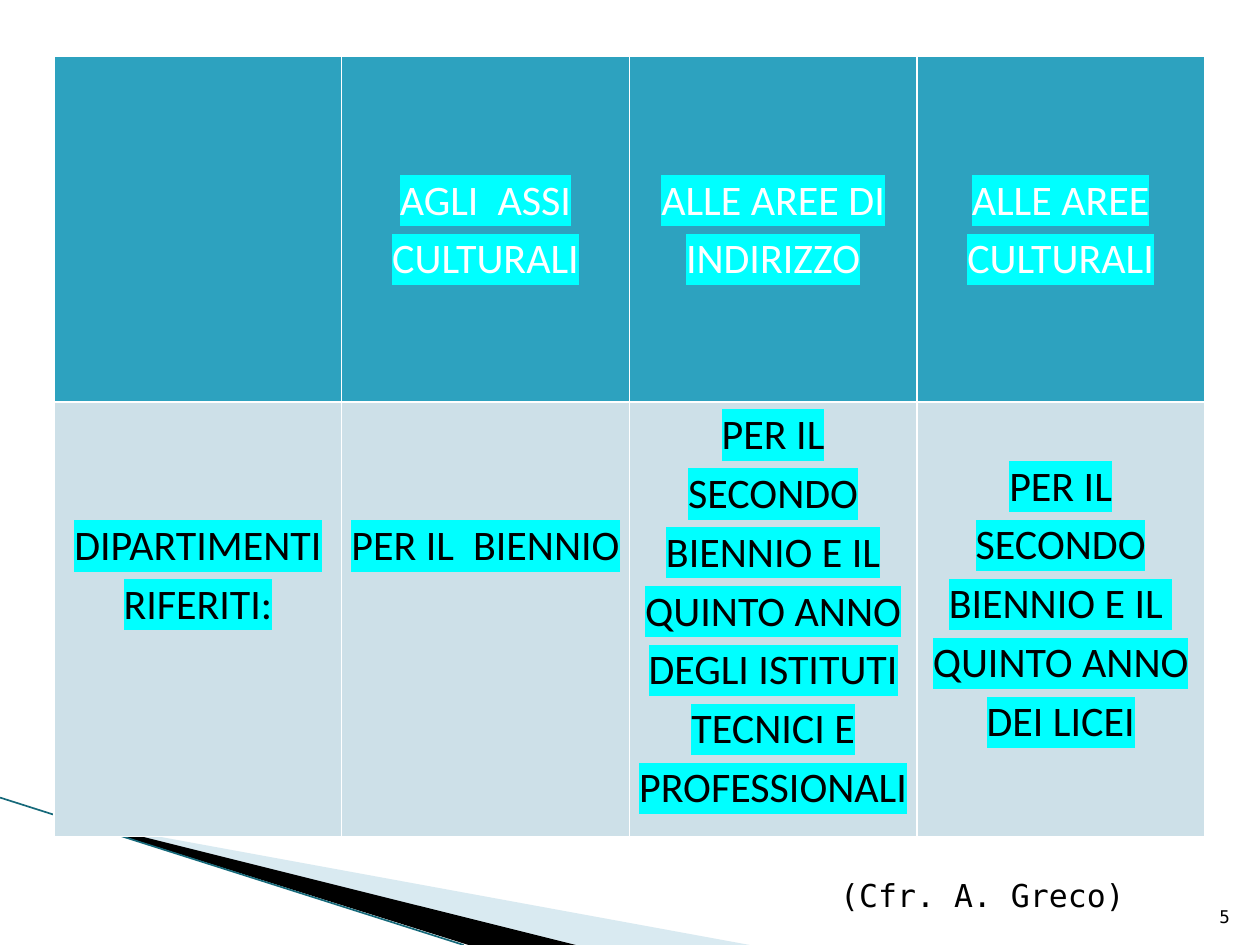
from dataclasses import dataclass

from lxml.etree import SubElement
from pptx import Presentation
from pptx.dml.color import RGBColor
from pptx.enum.shapes import MSO_CONNECTOR
from pptx.enum.text import MSO_ANCHOR, PP_ALIGN
from pptx.oxml import parse_xml
from pptx.oxml.ns import nsdecls, qn
from pptx.util import Inches, Pt


@dataclass(frozen=True)
class Theme:
    """Colours, fonts and type sizes of the slide."""
    header: str = "2DA2BF"
    body: str = "CDE0E8"
    white: str = "FFFFFF"
    black: str = "000000"
    highlight: str = "00FFFF"
    pale: str = "A0CBDC"
    edge: str = "16697A"
    table_font: str = "Calibri"
    note_font: str = "DejaVu Sans Mono"
    table_size: int = 24
    note_size: int = 18
    number_size: int = 10


@dataclass(frozen=True)
class Box:
    """A region in inches."""
    left: float
    top: float
    width: float
    height: float

    def lengths(self):
        """Return the region as slide lengths."""
        return [Inches(value) for value in (self.left, self.top, self.width, self.height)]


THEME = Theme()
HEADER_ROW = [
    (0, []),
    (0.88, ["AGLI  ASSI CULTURALI"]),
    (0.88, ["ALLE AREE DI INDIRIZZO"]),
    (0.88, ["ALLE AREE CULTURALI"]),
]
BODY_ROW = [
    (0.88, ["DIPARTIMENTI", "RIFERITI:"]),
    (0.88, ["PER IL  BIENNIO"]),
    (0, ["PER IL SECONDO BIENNIO E IL QUINTO ANNO DEGLI ISTITUTI TECNICI E PROFESSIONALI"]),
    (0.41, ["PER IL SECONDO BIENNIO E IL  QUINTO ANNO DEI LICEI"]),
]


def style_font(font, name, size, color):
    """Set the face, size and colour of a font."""
    font.name = name
    font.size = Pt(size)
    font.bold = False
    font.color.rgb = RGBColor.from_string(color)


def add_wedge(slide, box, points, color, opacity=None):
    """Draw a filled polygon from points relative to the box."""
    corners = [(Inches(box.left + x), Inches(box.top + y)) for x, y in points]
    builder = slide.shapes.build_freeform(*corners[0], scale=1.0)
    builder.add_line_segments(corners[1:], close=True)
    shape = builder.convert_to_shape()
    shape.shadow.inherit = False
    shape.fill.solid()
    shape.fill.fore_color.rgb = RGBColor.from_string(color)
    shape.line.fill.background()
    if opacity:
        color_element = shape.fill._xPr.find(qn("a:solidFill"))[0]
        SubElement(color_element, qn("a:alpha")).set("val", str(opacity * 1000))


def add_corner_decoration(slide, box):
    """Draw the two wedges and the thin edge in the lower left corner."""
    add_wedge(slide, box, [(0.55, 0.18), (5.95, 1.17), (4.56, 1.17), (0.55, 0.17)], THEME.pale, 40)
    add_wedge(slide, box, [(0.53, 0.16), (4.57, 1.17), (3.72, 1.17), (0.54, 0.17)], THEME.black)
    edge = slide.shapes.add_connector(
        MSO_CONNECTOR.STRAIGHT, Inches(box.left), Inches(box.top),
        Inches(box.left + 3.68), Inches(box.top + box.height))
    edge.line.color.rgb = RGBColor.from_string(THEME.edge)
    edge.line.width = Pt(0.95)
    SubElement(edge._element.spPr, qn("a:effectLst"))


def set_borders(cell):
    """Give a cell thin white borders."""
    properties = cell._tc.get_or_add_tcPr()
    for index, tag in enumerate(("lnL", "lnR", "lnT", "lnB")):
        properties.insert(index, parse_xml(
            f'<a:{tag} {nsdecls("a")} w="12700"><a:solidFill>'
            f'<a:srgbClr val="{THEME.white}"/></a:solidFill></a:{tag}>'))


def fill_cell(cell, offset, lines, fill, color):
    """Write highlighted centred lines below the given offset."""
    cell.fill.solid()
    cell.fill.fore_color.rgb = RGBColor.from_string(fill)
    set_borders(cell)
    cell.margin_left = cell.margin_right = Inches(0.07)
    cell.margin_top = Inches(offset)
    cell.margin_bottom = 0
    cell.vertical_anchor = MSO_ANCHOR.TOP
    cell.text_frame.text = "\n".join(lines)
    for paragraph in cell.text_frame.paragraphs:
        paragraph.alignment = PP_ALIGN.CENTER
        paragraph.line_spacing = 1.15
        for run in paragraph.runs:
            style_font(run.font, THEME.table_font, THEME.table_size, color)
            run._r.rPr.find(qn("a:solidFill")).addnext(parse_xml(
                f'<a:highlight {nsdecls("a")}><a:srgbClr val="{THEME.highlight}"/></a:highlight>'))


def add_departments_table(slide, box):
    """Build the table of departments in the box."""
    rows = [(HEADER_ROW, 2.74, THEME.header, THEME.white),
            (BODY_ROW, box.height - 2.74, THEME.body, THEME.black)]
    table = slide.shapes.add_table(len(rows), len(HEADER_ROW), *box.lengths()).table
    for column in table.columns:
        column.width = Inches(box.width / len(HEADER_ROW))
    for row, (contents, height, fill, color) in zip(table.rows, rows):
        row.height = Inches(height)
        for cell, (offset, lines) in zip(row.cells, contents):
            fill_cell(cell, offset, lines, fill, color)


def add_note(slide, box, text, size, alignment=PP_ALIGN.LEFT, anchor=MSO_ANCHOR.TOP):
    """Place one line of monospaced text in the box."""
    frame = slide.shapes.add_textbox(*box.lengths()).text_frame
    frame.word_wrap = True
    frame.vertical_anchor = anchor
    frame.text = text
    paragraph = frame.paragraphs[0]
    paragraph.alignment = alignment
    style_font(paragraph.runs[0].font, THEME.note_font, size, THEME.black)


def main():
    """Build and save the presentation."""
    presentation = Presentation()
    presentation.slide_width = Inches(10)
    presentation.slide_height = Inches(7.5)
    slide = presentation.slides.add_slide(presentation.slide_layouts[6])
    add_corner_decoration(slide, Box(0, 6.33, 5.95, 1.17))
    add_note(slide, Box(9.46, 7.01, 0.4, 0.4), "5", THEME.number_size,
             PP_ALIGN.RIGHT, MSO_ANCHOR.BOTTOM)
    add_departments_table(slide, Box(0.43, 0.45, 9.13, 6.19))
    add_note(slide, Box(6.57, 6.9, 2.99, 0.4), "(Cfr. A. Greco)", THEME.note_size)
    presentation.save("out.pptx")


if __name__ == "__main__":
    main()
